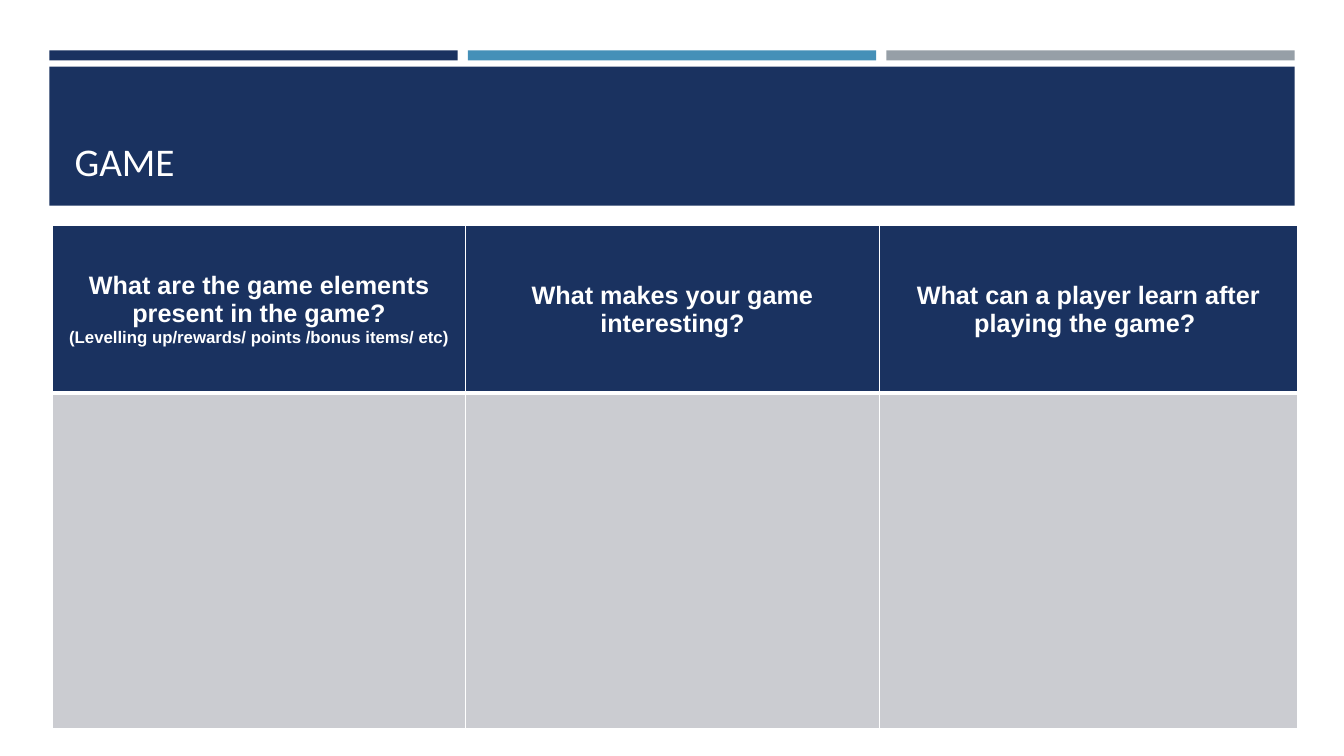
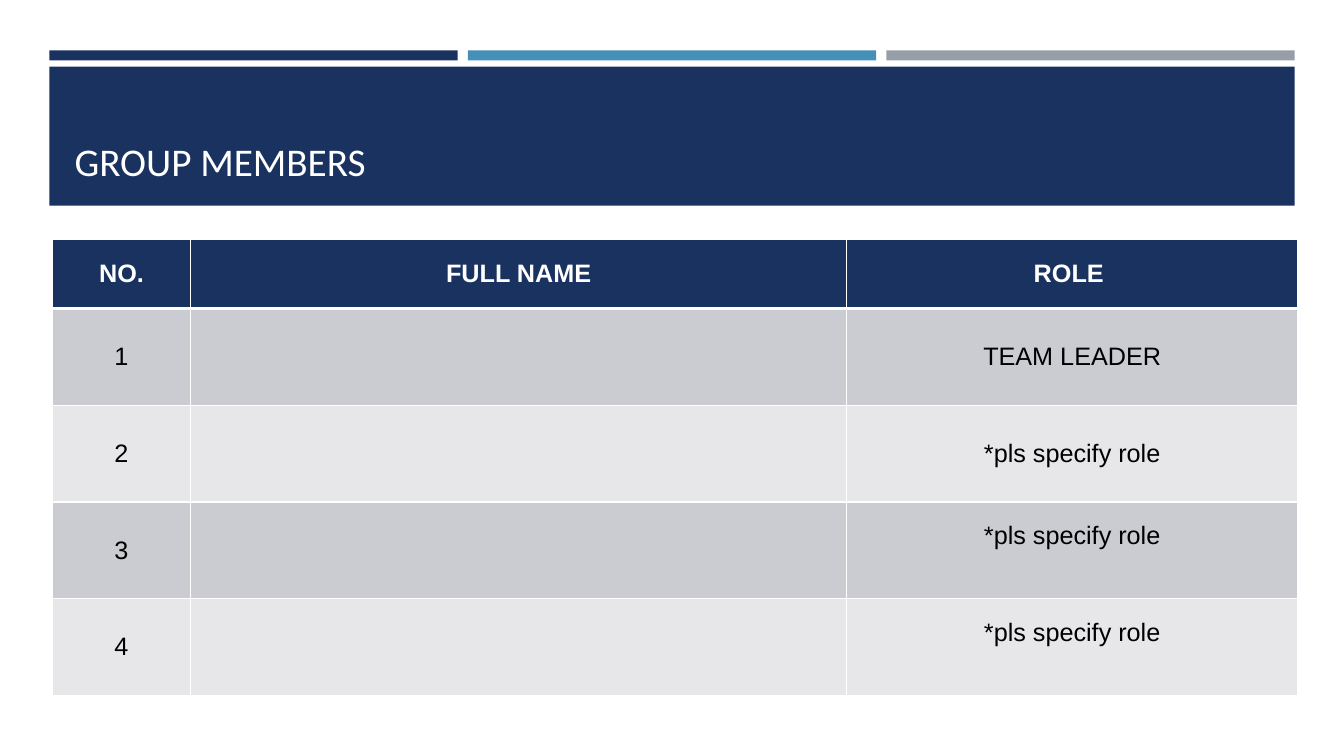
from lxml.etree import SubElement
from pptx import Presentation
from pptx.dml.color import RGBColor
from pptx.enum.shapes import MSO_SHAPE
from pptx.enum.text import MSO_ANCHOR, MSO_AUTO_SIZE, PP_ALIGN
from pptx.oxml.ns import qn
from pptx.util import Inches, Pt

NAVY, BLUE, GREY, WHITE, BLACK = "1A3260", "4590B8", "969FA7", "FFFFFF", "000000"
ROW_FILLS = ("CBCCD1", "E7E7E9")
LEFT, COLUMN, GAP = 0.49, 4.05, 0.1
FULL_WIDTH = 3 * COLUMN + 2 * GAP
TABLE_LEFT, TABLE_WIDTH = 0.52, 12.35
TITLE_FORMAT = {"name": "Calibri", "size": Pt(28), "bold": False}
HEADER_FORMAT = {"name": "Arial", "size": Pt(18), "bold": True}
BODY_FORMAT = HEADER_FORMAT | {"bold": False}
NOTE_FORMAT = HEADER_FORMAT | {"size": Pt(12)}
RAISED = Inches(0.33)


def color(value):
    """Turn a hex string into a colour."""
    return RGBColor.from_string(value)


def apply(target, values):
    """Set attributes from a dict of values."""
    for name, value in values.items():
        setattr(target, name, value)


def place(shape, left, top, width, height):
    """Position a shape in inches."""
    lengths = zip(("left", "top", "width", "height"), (left, top, width, height))
    apply(shape, {name: Inches(length) for name, length in lengths})


def write(para, text, font_format, ink, align):
    """Put one formatted run into a paragraph."""
    para.alignment = align
    span = para.add_run()
    span.text = text
    apply(span.font, font_format)
    span.font.color.rgb = color(ink)


def add_band(page, layout, place_at, fill):
    """Draw a plain band and hand it to the shared layout."""
    band = page.shapes.add_shape(MSO_SHAPE.RECTANGLE, 0, 0, 0, 0)
    place(band, *place_at)
    band.shadow.inherit = False
    band.fill.solid()
    band.fill.fore_color.rgb = color(fill)
    band.line.fill.background()
    layout.shapes._spTree.append(band._element)


def add_frame(page, layout):
    """Build the three stripes and the title band."""
    for index, fill in enumerate((NAVY, BLUE, GREY)):
        add_band(page, layout, (LEFT + index * (COLUMN + GAP), 0.5, COLUMN, 0.1), fill)
    add_band(page, layout, (LEFT, 0.66, FULL_WIDTH, 1.38), NAVY)


def add_title(page, text):
    """Move and format the title placeholder."""
    title = page.shapes.title
    place(title, LEFT + 0.15, 0.8, FULL_WIDTH - 0.3, 1.08)
    frame = title.text_frame
    apply(frame, {"vertical_anchor": MSO_ANCHOR.BOTTOM, "word_wrap": True,
                  "auto_size": MSO_AUTO_SIZE.NONE})
    write(frame.paragraphs[0], text, TITLE_FORMAT, WHITE, PP_ALIGN.LEFT)


def add_borders(cell, widths):
    """Give a cell white borders, with widths in points by side."""
    properties = cell._tc.get_or_add_tcPr()
    for side, width in widths.items():
        line = SubElement(properties, qn(f"a:ln{side}"), w=str(Pt(width)))
        SubElement(SubElement(line, qn("a:solidFill")), qn("a:srgbClr"), val=WHITE)


def fill_cell(cell, row, lines):
    """Format a table cell and write its lines of text."""
    add_borders(cell, {"L": 1, "R": 1, "T": 3 if row == 1 else 1, "B": 1 if row else 3})
    cell.fill.solid()
    cell.fill.fore_color.rgb = color(ROW_FILLS[(row - 1) % 2] if row else NAVY)
    cell.vertical_anchor = MSO_ANCHOR.MIDDLE
    frame = cell.text_frame
    for index, (text, font_format) in enumerate(lines):
        para = frame.add_paragraph() if index else frame.paragraphs[0]
        write(para, text, font_format, BLACK if row else WHITE, PP_ALIGN.CENTER)


def add_grid(page, top, shares, heights, rows):
    """Add a table with columns as shares of the full table width."""
    graphic = page.shapes.add_table(
        len(heights), len(shares), Inches(TABLE_LEFT), Inches(top),
        Inches(TABLE_WIDTH), Inches(sum(heights)))
    table = graphic.table
    apply(table, {"first_row": False, "horz_banding": False})
    for column, share in zip(table.columns, shares):
        column.width = Inches(TABLE_WIDTH * share / sum(shares))
    for index, (row, height, contents) in enumerate(zip(table.rows, heights, rows)):
        row.height = Inches(height)
        for cell, lines in zip(row.cells, contents):
            fill_cell(cell, index, lines)
    return table


def style(texts, font_format):
    """Make single-line cell contents, leaving blank cells empty."""
    return [[(text, font_format)] if text else [] for text in texts]


def add_game(page):
    """Fill the slide about the game."""
    add_title(page, "GAME")
    questions = style(("What are the game elements present in the game?",
                       "What makes your game interesting?",
                       "What can a player learn after playing the game? "), HEADER_FORMAT)
    questions[0].append(("(Levelling up/rewards/ points /bonus items/ etc)", NOTE_FORMAT))
    add_grid(page, 2.24, (4.1, 4.1, 4.15), (1.66, 3.33), [questions, [[]] * 3])


def add_members(page):
    """Fill the slide about the group members."""
    add_title(page, "GROUP MEMBERS")
    roles = ["TEAM LEADER"] + ["*pls specify role"] * 3
    rows = [style(("NO.", "FULL NAME", "ROLE "), HEADER_FORMAT)]
    rows += [style((str(number), "", role), BODY_FORMAT)
             for number, role in enumerate(roles, 1)]
    table = add_grid(page, 2.38, (1.37, 6.51, 4.47), [0.68] + [0.96] * 4, rows)
    for row in (3, 4):
        table.cell(row, 2).margin_bottom = RAISED


def main():
    """Build and save the deck."""
    deck = Presentation()
    apply(deck, {"slide_width": Inches(13.33), "slide_height": Inches(7.5)})
    layout = deck.slide_layouts.get_by_name("Title Only")
    game, members = [deck.slides.add_slide(layout) for _ in range(2)]
    add_frame(game, layout)
    add_game(game)
    add_members(members)
    deck.save("out.pptx")


if __name__ == "__main__":
    main()
